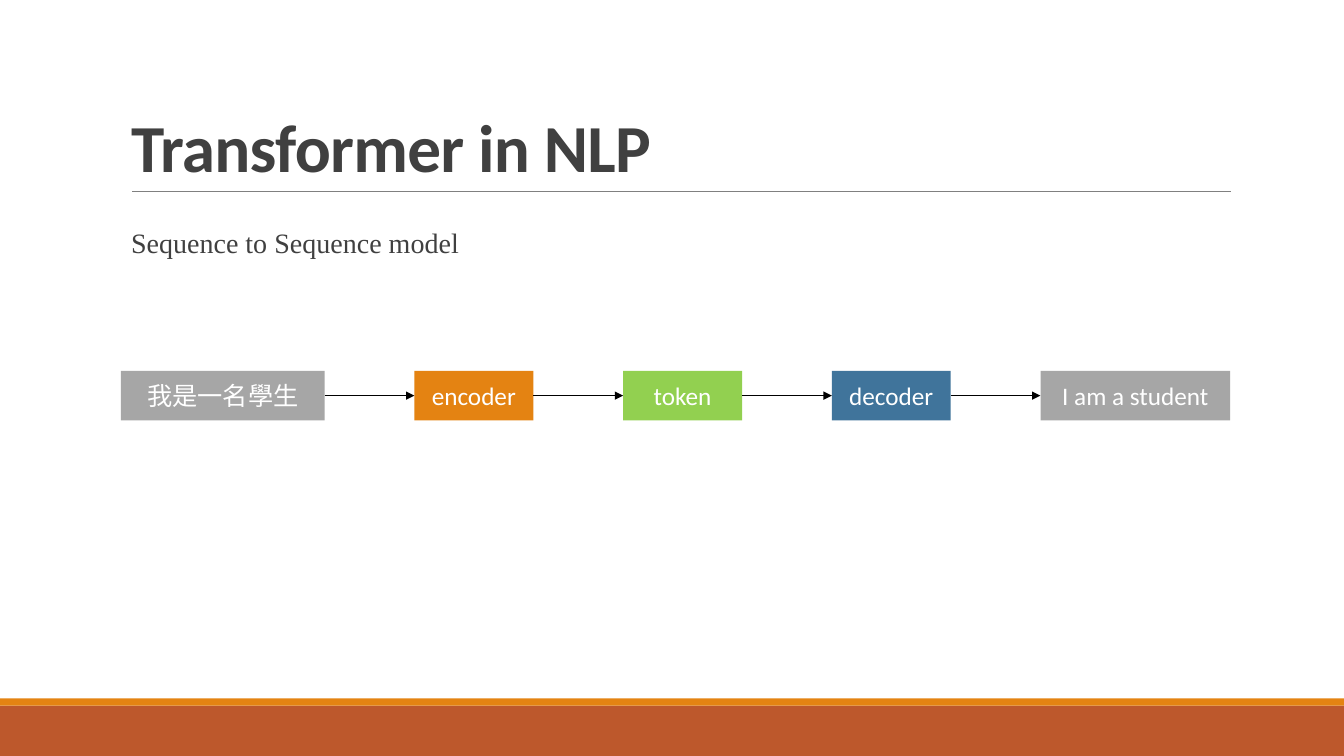
from lxml.etree import SubElement
from pptx import Presentation
from pptx.dml.color import RGBColor
from pptx.enum.shapes import MSO_CONNECTOR as Connector, MSO_SHAPE as Shape
from pptx.enum.text import MSO_ANCHOR as Anchor, MSO_AUTO_SIZE as AutoSize, PP_ALIGN as Align
from pptx.oxml.ns import qn
from pptx.util import Inches, Pt

COLORS = {
    "text": "404040", "rule": "808080", "arrow": "000000", "white": "FFFFFF",
    "band": "BD582C", "orange": "E48312", "gray": "A6A6A6",
    "green": "92D050", "blue": "40749B",
}
STAGES = [
    ("我是一名學生", 2.02, "gray"),
    ("encoder", 1.18, "orange"),
    ("token", 1.18, "green"),
    ("decoder", 1.18, "blue"),
    ("I am a student", 1.88, "gray"),
]


def color(name):
    return RGBColor.from_string(COLORS[name])


def place(shape, box):
    shape.left, shape.top, shape.width, shape.height = map(Inches, box)


def style_font(para, size, name, shade, bold=False):
    font = para.runs[0].font
    font.size, font.name, font.bold = Pt(size), name, bold
    font.color.rgb = color(shade)


def add_block(page, box, fill):
    block = page.shapes.add_shape(Shape.RECTANGLE, *map(Inches, box))
    block.shadow.inherit = False
    block.fill.solid()
    block.fill.fore_color.rgb = color(fill)
    block.line.fill.background()
    return block


def add_line(page, start, end, shade, width):
    line = page.shapes.add_connector(Connector.STRAIGHT, *map(Inches, start + end))
    line.line.color.rgb = color(shade)
    line.line.width = Pt(width)
    SubElement(line._element.spPr, qn("a:effectLst"))
    return line


def add_footer(page, box):
    left, top, width, height = box
    stripe = 0.07
    add_block(page, (left, top + stripe, width, height - stripe), "band")
    add_block(page, (left, top, width, stripe), "orange")


def add_title(page, box):
    left, top, width, height = box
    bottom = top + height
    add_line(page, (left + 0.11, bottom), (left + width + 0.01, bottom), "rule", 0.5)
    title = page.shapes.title
    place(title, box)
    frame = title.text_frame
    frame.text = "Transformer in NLP"
    frame.auto_size, frame.vertical_anchor = AutoSize.NONE, Anchor.BOTTOM
    para = frame.paragraphs[0]
    para.alignment, para.line_spacing = Align.LEFT, 0.85
    style_font(para, 48, "Calibri", "text", bold=True)
    para.runs[0].font._element.set("spc", "-50")


def add_body(page, box):
    body = page.placeholders[1]
    place(body, box)
    frame = body.text_frame
    frame.text = "Sequence to Sequence model"
    frame.auto_size, frame.vertical_anchor = AutoSize.NONE, Anchor.TOP
    frame.margin_left = frame.margin_right = 0
    para = frame.paragraphs[0]
    para.line_spacing, para.space_before, para.space_after = 1.5, Pt(12), Pt(2)
    style_font(para, 20, "Times New Roman", "text")
    props = para._p.get_or_add_pPr()
    props.set("marL", str(Inches(0.1)))
    props.set("indent", str(Inches(-0.1)))
    bullet_color = SubElement(props, qn("a:buClr"))
    SubElement(bullet_color, qn("a:srgbClr"), val=COLORS["orange"])
    SubElement(props, qn("a:buChar"), char=" ")


def add_flow(page, box):
    left, top, width, height = box
    gap = (width - sum(stage[1] for stage in STAGES)) / (len(STAGES) - 1)
    middle = top + height / 2
    for index, (label, stage_width, fill) in enumerate(STAGES):
        block = add_block(page, (left, top, stage_width, height), fill)
        frame = block.text_frame
        frame.text = label
        frame.vertical_anchor = Anchor.MIDDLE
        para = frame.paragraphs[0]
        para.alignment = Align.CENTER
        style_font(para, 18, "Calibri", "white")
        if index:
            arrow = add_line(page, (left - gap, middle), (left, middle), "arrow", 1)
            SubElement(arrow.line._get_or_add_ln(), qn("a:tailEnd"), type="triangle")
        left += stage_width + gap


def main():
    deck = Presentation()
    deck.slide_width, deck.slide_height = Inches(13.33), Inches(7.5)
    page = deck.slides.add_slide(deck.slide_layouts[1])
    add_footer(page, (0, 6.93, 13.33, 0.57))
    add_title(page, (1.2, 0.31, 11, 1.59))
    add_body(page, (1.2, 2.02, 11, 4.4))
    add_flow(page, (1.2, 3.68, 11, 0.49))
    deck.save("out.pptx")


if __name__ == "__main__":
    main()
